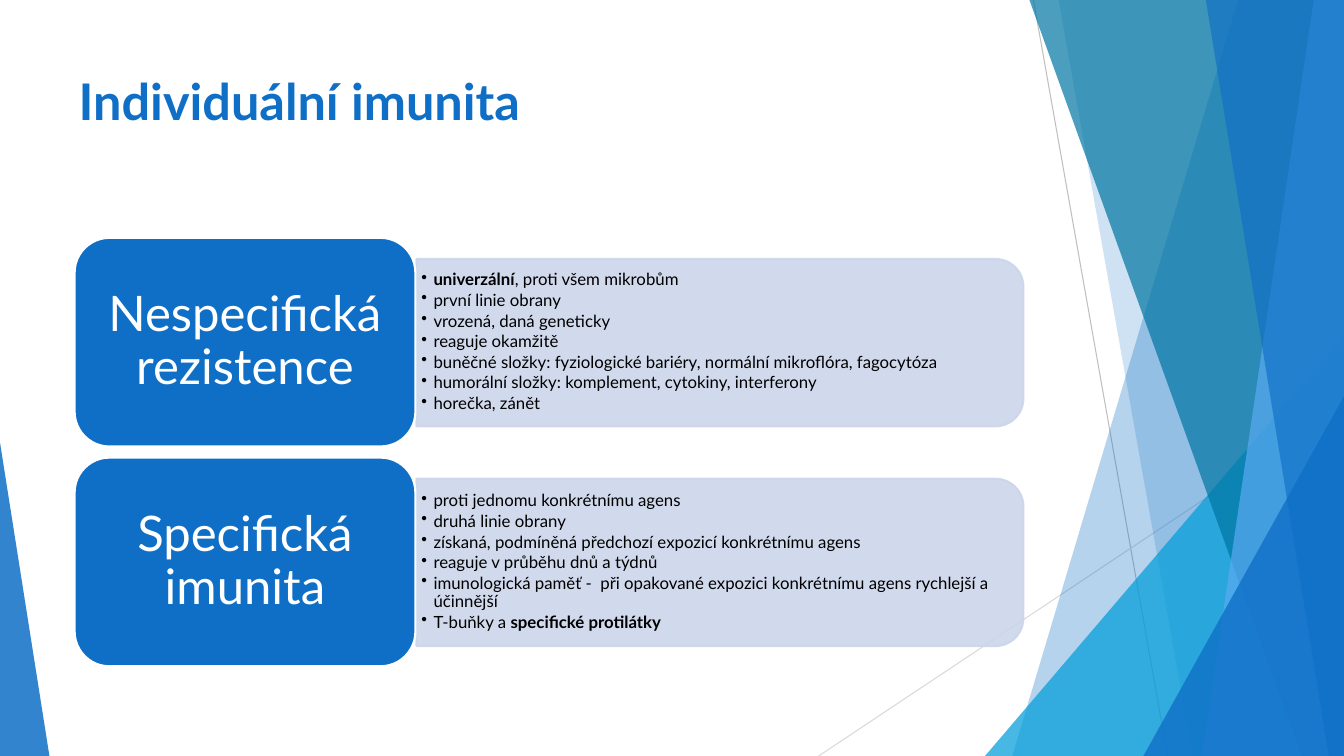
from dataclasses import dataclass

from lxml import etree
from pptx import Presentation
from pptx.dml.color import RGBColor
from pptx.enum.shapes import MSO_CONNECTOR, MSO_SHAPE
from pptx.enum.text import MSO_ANCHOR, MSO_AUTO_SIZE, PP_ALIGN
from pptx.oxml.ns import qn
from pptx.util import Inches, Pt

STRAIGHT = MSO_CONNECTOR.STRAIGHT
ROUNDED = MSO_SHAPE.ROUNDED_RECTANGLE
ROUNDED_TOP = MSO_SHAPE.ROUND_2_SAME_RECTANGLE
TRIANGLE = MSO_SHAPE.ISOSCELES_TRIANGLE
TOP, MIDDLE = MSO_ANCHOR.TOP, MSO_ANCHOR.MIDDLE
LEFT, CENTER = PP_ALIGN.LEFT, PP_ALIGN.CENTER
NO_AUTOFIT = MSO_AUTO_SIZE.NONE

SLIDE_WIDTH, SLIDE_HEIGHT = 13.33, 7.5
FIRST_ROW_TOP, ROW_STEP = 2.36, 2.18


@dataclass(frozen=True)
class Theme:
    font: str = "Lato"
    blue: str = "0F6FC6"
    light_blue: str = "59AAF2"
    cyan: str = "009DD9"
    teal: str = "0076A3"
    panel: str = "CCD5EA"
    gray: str = "BFBFBF"
    light_gray: str = "D9D9D9"
    white: str = "FFFFFF"
    black: str = "000000"
    title_size: float = 36
    card_size: float = 35
    list_size: float = 12
    thin_line: float = 0.75
    outline: float = 1.5


ROWS = [
    ("Nespecifická rezistence", [
        [("univerzální", True), (", proti všem mikrobům", False)],
        [("první linie obrany", False)],
        [("vrozená, daná geneticky", False)],
        [("reaguje okamžitě", False)],
        [("buněčné složky: fyziologické bariéry, normální mikroflóra, fagocytóza", False)],
        [("humorální složky: komplement, cytokiny, interferony", False)],
        [("horečka, zánět", False)],
    ]),
    ("Specifická imunita", [
        [("proti jednomu konkrétnímu agens", False)],
        [("druhá linie obrany", False)],
        [("získaná, podmíněná předchozí expozicí konkrétnímu agens", False)],
        [("reaguje v průběhu dnů a týdnů", False)],
        [("imunologická paměť -  při opakované expozici konkrétnímu agens "
          "rychlejší a účinnější", False)],
        [("T-buňky a ", False), ("specifické protilátky", True)],
    ]),
]


class SlideBuilder:
    def __init__(self, slide, theme):
        self.slide = slide
        self.shapes = slide.shapes
        self.theme = theme

    def paint(self, target, color, opacity=100):
        """Give a fill format a solid colour with an opacity in percent."""
        target.solid()
        target.fore_color.rgb = RGBColor.from_string(color)
        if opacity < 100:
            solid = target.fore_color._xFill
            alpha = etree.SubElement(solid.find(qn("a:srgbClr")), qn("a:alpha"))
            alpha.set("val", str(opacity * 1000))

    def style_font(self, font, size, color, bold=False):
        font.name = self.theme.font
        font.size = Pt(size)
        font.bold = bold
        font.color.rgb = RGBColor.from_string(color)

    def set_frame(self, text_frame, anchor, side, edge):
        text_frame.word_wrap = True
        text_frame.auto_size = NO_AUTOFIT
        text_frame.vertical_anchor = anchor
        text_frame.margin_left = text_frame.margin_right = Inches(side)
        text_frame.margin_top = text_frame.margin_bottom = Inches(edge)

    def title(self, text, left, top, width, height):
        shape = self.shapes.title
        shape.left, shape.top = Inches(left), Inches(top)
        shape.width, shape.height = Inches(width), Inches(height)
        self.set_frame(shape.text_frame, TOP, 0.1, 0.05)
        shape.text_frame.text = text
        paragraph = shape.text_frame.paragraphs[0]
        paragraph.alignment = LEFT
        self.style_font(paragraph.runs[0].font, self.theme.title_size, self.theme.blue, True)

    def line(self, start, end, color):
        connector = self.shapes.add_connector(STRAIGHT, *map(Inches, start + end))
        connector.line.color.rgb = RGBColor.from_string(color)
        connector.line.width = Pt(self.theme.thin_line)
        etree.SubElement(connector._element.spPr, qn("a:effectLst"))

    def shape(self, kind, left, top, width, height, color, opacity=100):
        shape = self.shapes.add_shape(kind, *map(Inches, (left, top, width, height)))
        shape.shadow.inherit = False
        self.paint(shape.fill, color, opacity)
        shape.line.fill.background()
        return shape

    def triangle(self, left, top, width, apex, color, opacity):
        """Add a right triangle standing on the slide's bottom edge."""
        shape = self.shape(TRIANGLE, left, top, width, SLIDE_HEIGHT - top, color, opacity)
        shape.adjustments[0] = apex

    def band(self, top_left, bottom_left, color, opacity):
        """Fill from a slanted left side to the slide's right edge."""
        builder = self.shapes.build_freeform(Inches(top_left), 0)
        corners = [(SLIDE_WIDTH, 0), (SLIDE_WIDTH, SLIDE_HEIGHT), (bottom_left, SLIDE_HEIGHT)]
        builder.add_line_segments([(Inches(x), Inches(y)) for x, y in corners])
        shape = builder.convert_to_shape()
        shape.shadow.inherit = False
        self.paint(shape.fill, color, opacity)
        shape.line.fill.background()

    def panel(self, left, top, width, height):
        """Add a panel rounded on its right side, as a turned shape."""
        offset = (width - height) / 2
        shape = self.shape(ROUNDED_TOP, left + offset, top - offset, height, width,
                           self.theme.panel, 90)
        shape.rotation = 90
        self.paint(shape.line.fill, self.theme.panel, 90)
        shape.line.width = Pt(self.theme.outline)

    def card(self, text, left, top, width, height):
        shape = self.shape(ROUNDED, left, top, width, height, self.theme.blue)
        shape.line.color.rgb = RGBColor.from_string(self.theme.white)
        shape.line.width = Pt(self.theme.outline)
        self.set_frame(shape.text_frame, MIDDLE, 0.15, 0.07)
        shape.text_frame.text = text
        paragraph = shape.text_frame.paragraphs[0]
        paragraph.alignment = CENTER
        paragraph.line_spacing = 0.9
        self.style_font(paragraph.runs[0].font, self.theme.card_size, self.theme.white)

    def bullets(self, items, left, top, width, height):
        box = self.shapes.add_textbox(*map(Inches, (left, top, width, height)))
        text_frame = box.text_frame
        self.set_frame(text_frame, MIDDLE, 0.05, 0.03)
        for index, item in enumerate(items):
            paragraph = text_frame.add_paragraph() if index else text_frame.paragraphs[0]
            properties = paragraph._p.get_or_add_pPr()
            properties.set("marL", str(Inches(0.12)))
            properties.set("indent", str(-Inches(0.12)))
            etree.SubElement(properties, qn("a:buChar")).set("char", "•")
            paragraph.level = 1
            paragraph.alignment = LEFT
            paragraph.line_spacing = 0.9
            paragraph.space_after = Pt(0.15 * self.theme.list_size)
            for text, bold in item:
                run = paragraph.add_run()
                run.text = text
                self.style_font(run.font, self.theme.list_size, self.theme.black, bold)

    def backdrop(self):
        theme = self.theme
        self.line((10.25, 0), (11.58, SLIDE_HEIGHT), theme.gray)
        self.line((SLIDE_WIDTH, 4.03), (8.12, SLIDE_HEIGHT), theme.light_gray)
        self.band(12.28, 10.04, theme.blue, 30)
        self.band(10.5, 11.83, theme.blue, 20)
        self.triangle(9.77, 3.33, 3.56, 1, theme.cyan, 72)
        self.band(10.21, 12.91, theme.teal, 70)
        self.band(13.03, 11.92, theme.light_blue, 70)
        self.band(11.96, 13.18, theme.blue, 65)
        self.triangle(11.34, 3.93, 1.99, 1, theme.blue, 80)
        self.triangle(0, 4.39, 0.49, 0, theme.blue, 85)


def main():
    presentation = Presentation()
    presentation.slide_width = Inches(SLIDE_WIDTH)
    presentation.slide_height = Inches(SLIDE_HEIGHT)
    slide = presentation.slides.add_slide(presentation.slide_layouts[5])
    builder = SlideBuilder(slide, Theme())
    builder.backdrop()
    builder.title("Individuální imunita", 0.68, 0.65, 9.4, 1.44)
    for index, (heading, items) in enumerate(ROWS):
        top = FIRST_ROW_TOP + index * ROW_STEP
        builder.panel(4.13, top + 0.21, 6.02, 1.66)
        builder.bullets(items, 4.13, top + 0.29, 5.94, 1.49)
        builder.card(heading, 0.74, top, 3.38, 2.07)
    presentation.save("out.pptx")


if __name__ == "__main__":
    main()
